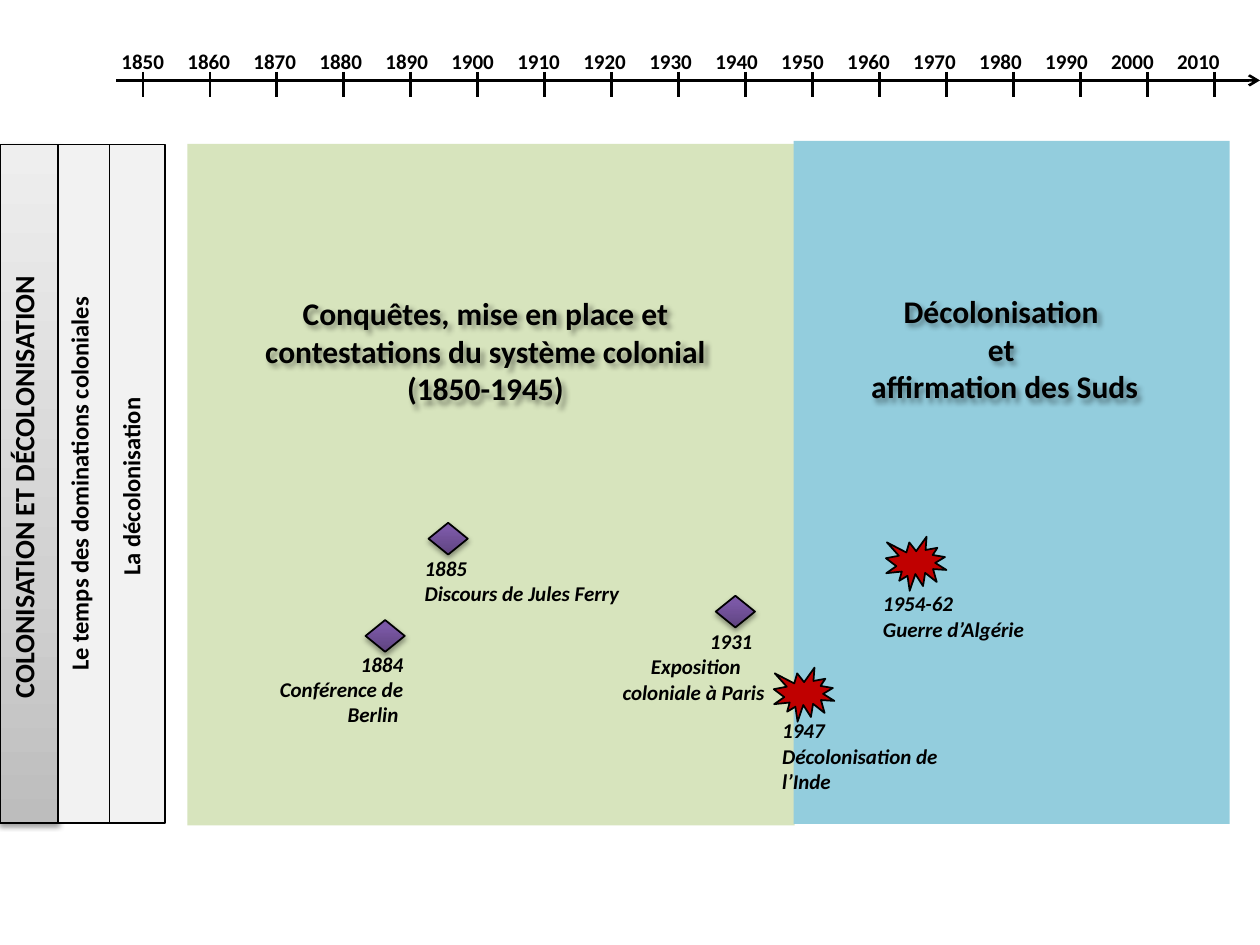
from dataclasses import dataclass
from pptx import Presentation
from pptx import util as u
from pptx.dml.color import RGBColor
from pptx.enum import shapes, text
from pptx.oxml import parse_xml
from pptx.oxml.ns import nsdecls, qn


@dataclass(frozen=True)
class Theme:
    font: str = "Calibri"
    ink: str = "000000"
    side: str = "F2F2F2"
    conquest: str = "D7E4BD"
    independence: str = "93CDDD"
    conflict: str = "C00000"
    title_stops: tuple = ((0, "BDBDBD"), (35, "D1D1D1"), (100, "EEEEEE"))
    event_stops: tuple = ((0, "5F4480"), (80, "7B58A6"), (100, "7C57A8"))
    title_size: int = 16
    side_size: int = 14
    heading_size: int = 18
    small_size: int = 12


theme = Theme()
ink = RGBColor.from_string(theme.ink)
LEFT, CENTER, RIGHT = text.PP_ALIGN.LEFT, text.PP_ALIGN.CENTER, text.PP_ALIGN.RIGHT
frame_format = {
    "word_wrap": True,
    "auto_size": text.MSO_AUTO_SIZE.NONE,
    "vertical_anchor": text.MSO_ANCHOR.TOP,
}


def write(frame, lines, size, align=LEFT, italic=False):
    """Fill a text frame, one paragraph per line."""
    for name, value in frame_format.items():
        setattr(frame, name, value)
    frame.text = "\n".join(lines)
    font_format = {"name": theme.font, "size": u.Pt(size), "bold": True, "italic": italic}
    for paragraph in frame.paragraphs:
        paragraph.alignment = align
        font = paragraph.runs[0].font
        for name, value in font_format.items():
            setattr(font, name, value)
        font.color.rgb = ink


def shade(shape, stops=(), distance=1.7, degrees=90):
    """Cast a soft shadow; with stops, also fill with a bottom-to-top gradient."""
    if stops:
        shape.fill.gradient()
        shape.fill.gradient_angle = 90
        stop_list = shape._element.spPr.find(qn("a:gradFill")).find(qn("a:gsLst"))
        stop_list.clear()
        for position, color in stops:
            stop_list.append(parse_xml(
                f'<a:gs {nsdecls("a")} pos="{position * 1000}"><a:srgbClr val="{color}"/></a:gs>'))
    shape.shadow.inherit = False
    shape._element.spPr.find(qn("a:effectLst")).append(parse_xml(
        f'<a:outerShdw {nsdecls("a")} blurRad="{u.Pt(3.1)}" dist="{u.Pt(distance)}" '
        f'dir="{degrees * 60000}" rotWithShape="0"><a:srgbClr val="{theme.ink}">'
        '<a:alpha val="38000"/></a:srgbClr></a:outerShdw>'))


deck = Presentation()
deck.slide_width, deck.slide_height = u.Cm(25.4), u.Cm(19.05)
slide = deck.slides.add_slide(deck.slide_layouts.get_by_name("Title Only"))

# Time axis: year labels on evenly spaced tab stops
label_step = 1.33
decades = range(1850, 2011, 10)
years = slide.shapes.add_textbox(u.Cm(2.2), u.Cm(0.85), u.Cm(23.2), u.Cm(0.76))
write(years.text_frame, ["\t".join(map(str, decades))], theme.small_size)
tabs = "".join(f'<a:tab pos="{u.Cm(label_step * n)}" algn="l"/>' for n in range(1, len(decades)))
years.text_frame.paragraphs[0]._p.get_or_add_pPr().append(
    parse_xml(f'<a:tabLst {nsdecls("a")}>{tabs}</a:tabLst>'))

# Time axis: arrow, then one tick per decade
axis_y, first_tick, tick_step = 1.62, 2.88, 1.35
strokes = [(2.34, axis_y, 25.4, axis_y)]
for n in range(len(decades)):
    tick_x = first_tick + n * tick_step
    strokes.append((tick_x, 1.45, tick_x, 1.96))
for index, ends in enumerate(strokes):
    stroke = slide.shapes.add_connector(shapes.MSO_CONNECTOR.STRAIGHT, *map(u.Cm, ends))
    stroke.line.color.rgb = ink
    stroke.line.width = u.Pt(1.5)
    if index == 0:
        stroke.line._get_or_add_ln().append(parse_xml(f'<a:tailEnd {nsdecls("a")} type="arrow"/>'))
    stroke._element.spPr.append(parse_xml(f'<a:effectLst {nsdecls("a")}/>'))

# Vertical bars on the left: theme, chapter and lesson
bar_top, bar_height, theme_width = 2.92, 13.67, 1.19
bars = []
for left, width in ((0, theme_width), (1.17, 1.12), (2.21, 1.12)):
    bar = slide.shapes.add_shape(
        shapes.MSO_SHAPE.RECTANGLE, *map(u.Cm, (left, bar_top, width, bar_height)))
    bar.line.color.rgb = ink
    bar.line.width = u.Pt(0.75)
    bars.append(bar)
theme_bar, *side_bars = bars
shade(theme_bar, theme.title_stops)
for bar, label in zip(side_bars, ("Le temps des dominations coloniales", "La décolonisation ")):
    bar.fill.solid()
    bar.fill.fore_color.rgb = RGBColor.from_string(theme.side)
    bar.shadow.inherit = False
    write(bar.text_frame, [label], theme.side_size, CENTER)
    bar.text_frame._txBody.bodyPr.set("vert", "vert270")

# Title, turned a quarter to run up the theme bar
title = slide.shapes.title
half_turn_shift = (bar_height - theme_width) / 2
title_place = {
    "left": u.Cm(-half_turn_shift),
    "top": u.Cm(bar_top + half_turn_shift),
    "width": u.Cm(bar_height),
    "height": u.Cm(theme_width),
    "rotation": 270,
}
for name, value in title_place.items():
    setattr(title, name, value)
write(title.text_frame, ["COLONISATION ET DÉCOLONISATION "], theme.title_size, CENTER)
theme_bar._element.addnext(title._element)

# Period blocks
periods = [
    ((3.78, 2.9, 12.24, 13.74), theme.conquest),
    ((16, 2.84, 8.79, 13.77), theme.independence),
]
for box, color in periods:
    period = slide.shapes.add_shape(shapes.MSO_SHAPE.RECTANGLE, *map(u.Cm, box))
    period.fill.solid()
    period.fill.fore_color.rgb = RGBColor.from_string(color)
    period.line.fill.background()
    period.shadow.inherit = False

# Period headings, with shadowed letters
headings = [
    ((4.93, 5.8, 9.86, 2.57),
     ["Conquêtes, mise en place et ", "contestations du système colonial ", "(1850-1945) "]),
    ((17.27, 5.76, 5.97, 2.57), ["Décolonisation ", "et ", "affirmation des Suds "]),
]
for box, lines in headings:
    heading = slide.shapes.add_textbox(*map(u.Cm, box))
    write(heading.text_frame, lines, theme.heading_size, CENTER)
    shade(heading, distance=3, degrees=45)

# Events: caption box, lines, alignment
captions = [
    ((4.47, 13, 3.91, 1.8), ["1884", "Conférence de Berlin "], RIGHT),
    ((8.31, 11.07, 5.46, 1.3), ["1885", "Discours de Jules Ferry"], LEFT),
    ((12.14, 12.55, 3.78, 1.8), ["1931", "Exposition coloniale à Paris "], CENTER),
    ((15.52, 14.35, 4.27, 1.8), ["1947", "Décolonisation de l’Inde"], LEFT),
    ((17.55, 11.79, 5.46, 1.3), ["1954-62", "Guerre d’Algérie"], LEFT),
]
for box, lines, align in captions:
    caption = slide.shapes.add_textbox(*map(u.Cm, box))
    write(caption.text_frame, lines, theme.small_size, align, italic=True)
    if align == CENTER:  # the year stands under its marker
        year = caption.text_frame.paragraphs[0]
        year.alignment = LEFT
        year._p.get_or_add_pPr().set("marL", str(u.Cm(1.92)))

# Event markers: diamonds for colonial events, bursts for independence
diamond = (shapes.MSO_SHAPE.FLOWCHART_DECISION, 0.79, 0.64)
burst = (shapes.MSO_SHAPE.EXPLOSION1, 1.22, 1.09)
markers = [
    (burst, 17.86, 10.82), (diamond, 7.37, 12.5), (diamond, 8.64, 10.54),
    (diamond, 14.43, 12.01), (burst, 15.6, 13.46),
]
for (outline, width, height), left, top in markers:
    marker = slide.shapes.add_shape(outline, *map(u.Cm, (left, top, width, height)))
    marker.line.color.rgb = ink
    marker.line.width = u.Pt(1)
    if outline == diamond[0]:
        shade(marker, theme.event_stops)
    else:
        marker.fill.solid()
        marker.fill.fore_color.rgb = RGBColor.from_string(theme.conflict)
        marker.shadow.inherit = False

deck.save("out.pptx")
